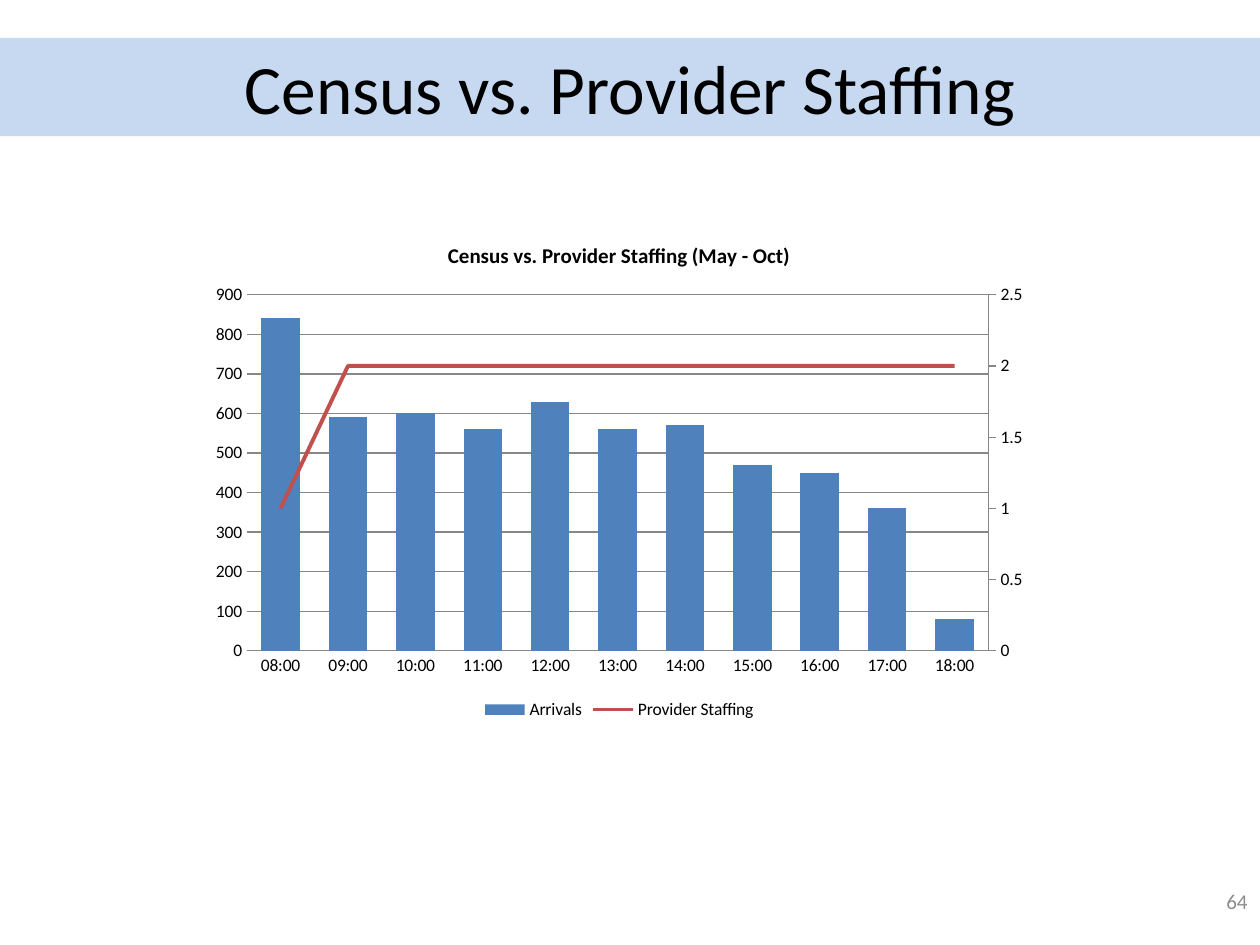
from lxml.etree import SubElement
from pptx import Presentation
from pptx.chart.data import CategoryChartData
from pptx.dml.color import RGBColor
from pptx.enum.chart import XL_CHART_TYPE, XL_LEGEND_POSITION, XL_MARKER_STYLE, XL_TICK_MARK
from pptx.enum.shapes import MSO_SHAPE
from pptx.enum.text import MSO_ANCHOR, PP_ALIGN
from pptx.oxml import parse_xml
from pptx.oxml.ns import nsdecls, qn
from pptx.util import Pt

BLACK = RGBColor(0x00, 0x00, 0x00)
GREY = RGBColor(0x8C, 0x8C, 0x8C)
GRID = RGBColor(0x87, 0x87, 0x87)
BAND = RGBColor(0xC6, 0xD9, 0xF1)
BLUE = RGBColor(0x4F, 0x81, 0xBD)
RED = RGBColor(0xC0, 0x50, 0x4D)

HOURS = [f"{hour:02d}:00" for hour in range(8, 19)]
ARRIVALS = [840, 590, 600, 560, 630, 560, 570, 470, 450, 360, 80]
PROVIDERS = [1] + [2] * 10

RIGHT_AXES = (
    """<c:catAx %s><c:axId val="501"/>
    <c:scaling><c:orientation val="minMax"/></c:scaling>
    <c:delete val="1"/><c:axPos val="b"/><c:crossAx val="502"/></c:catAx>""",
    f"""<c:valAx %s><c:axId val="502"/>
    <c:scaling><c:orientation val="minMax"/><c:max val="2.5"/><c:min val="0"/></c:scaling>
    <c:delete val="0"/><c:axPos val="r"/>
    <c:numFmt formatCode="General" sourceLinked="0"/>
    <c:majorTickMark val="out"/><c:minorTickMark val="none"/>
    <c:tickLblPos val="nextTo"/>
    <c:spPr><a:ln w="9525"><a:solidFill><a:srgbClr val="{GRID}"/></a:solidFill></a:ln></c:spPr>
    <c:crossAx val="501"/><c:crosses val="max"/><c:majorUnit val="0.5"/></c:valAx>""",
)


def apply(target, values):
    for name, value in values.items():
        setattr(target, name, value)


def style_font(font, size, color=BLACK, bold=False):
    apply(font, {"name": "Calibri", "size": Pt(size), "bold": bold})
    font.color.rgb = color


def style_line(line, color, width):
    line.color.rgb = color
    line.width = Pt(width)


def write_text(box, text, size, color, align):
    apply(box.text_frame, {"word_wrap": True, "vertical_anchor": MSO_ANCHOR.MIDDLE})
    para = box.text_frame.paragraphs[0]
    para.alignment = align
    span = para.add_run()
    span.text = text
    style_font(span.font, size, color)


def add_title(page, text):
    band = page.shapes.add_shape(MSO_SHAPE.RECTANGLE, 0, Pt(21.6), Pt(720), Pt(56.2))
    band.shadow.inherit = False
    band.fill.solid()
    band.fill.fore_color.rgb = BAND
    band.line.fill.background()
    write_text(band, text, 39.6, BLACK, PP_ALIGN.CENTER)


def add_page_number(page, text):
    box = page.shapes.add_textbox(Pt(552), Pt(500.4), Pt(168), Pt(28.8))
    write_text(box, text, 12, GREY, PP_ALIGN.RIGHT)


def move_to_right_axis(chart):
    """Turn the last column series into a line on a second value axis."""
    bars = chart.plots[0]._element
    series = bars.findall(qn("c:ser"))[-1]
    for column_setting in series.findall(qn("c:invertIfNegative")):
        series.remove(column_setting)
    lines = parse_xml(f'<c:lineChart {nsdecls("c")}><c:grouping val="standard"/>'
                      '<c:varyColors val="0"/></c:lineChart>')
    lines.append(series)
    for tag, value in (("marker", "1"), ("axId", "501"), ("axId", "502")):
        SubElement(lines, qn(f"c:{tag}")).set("val", value)
    bars.addnext(lines)
    last_axis = bars.getparent().findall(qn("c:valAx"))[-1]
    for axis in reversed(RIGHT_AXES):
        last_axis.addnext(parse_xml(axis % nsdecls("c", "a")))


def style_axes(chart):
    no_ticks = {"major_tick_mark": XL_TICK_MARK.NONE, "minor_tick_mark": XL_TICK_MARK.NONE}
    apply(chart.category_axis, no_ticks)
    style_line(chart.category_axis.format.line, GRID, 0.75)
    values = chart.value_axis
    apply(values, {**no_ticks, "minimum_scale": 0, "maximum_scale": 900,
                   "major_unit": 100, "has_major_gridlines": True})
    values.format.line.fill.background()
    style_line(values.major_gridlines.format.line, GRID, 0.75)


def add_staffing_chart(page):
    data = CategoryChartData()
    data.categories = HOURS
    data.add_series("Arrivals", ARRIVALS)
    data.add_series("Provider Staffing", PROVIDERS)
    chart = page.shapes.add_chart(XL_CHART_TYPE.COLUMN_CLUSTERED, Pt(113.8), Pt(126),
                                  Pt(480), Pt(288), data).chart
    style_font(chart.font, 10)

    # Title and legend
    chart.has_title = True
    chart.chart_title.include_in_layout = False
    title = chart.chart_title.text_frame
    title.text = "Census vs. Provider Staffing (May - Oct)"
    style_font(title.paragraphs[0].runs[0].font, 12, bold=True)
    chart.has_legend = True
    apply(chart.legend, {"position": XL_LEGEND_POSITION.BOTTOM, "include_in_layout": False})

    # Columns on the left axis, line on the right axis
    style_axes(chart)
    move_to_right_axis(chart)
    columns, lines = chart.plots
    apply(columns, {"gap_width": 75, "overlap": -25, "vary_by_categories": False})
    arrivals = columns.series[0].format.fill
    arrivals.solid()
    arrivals.fore_color.rgb = BLUE
    staffing = lines.series[0]
    staffing.smooth = False
    staffing.marker.style = XL_MARKER_STYLE.NONE
    style_line(staffing.format.line, RED, 2.25)


def main():
    deck = Presentation()
    apply(deck, {"slide_width": Pt(720), "slide_height": Pt(540)})
    page = deck.slides.add_slide(deck.slide_layouts[6])
    add_title(page, "Census vs. Provider Staffing")
    add_page_number(page, "64")
    add_staffing_chart(page)
    deck.save("out.pptx")


if __name__ == "__main__":
    main()
